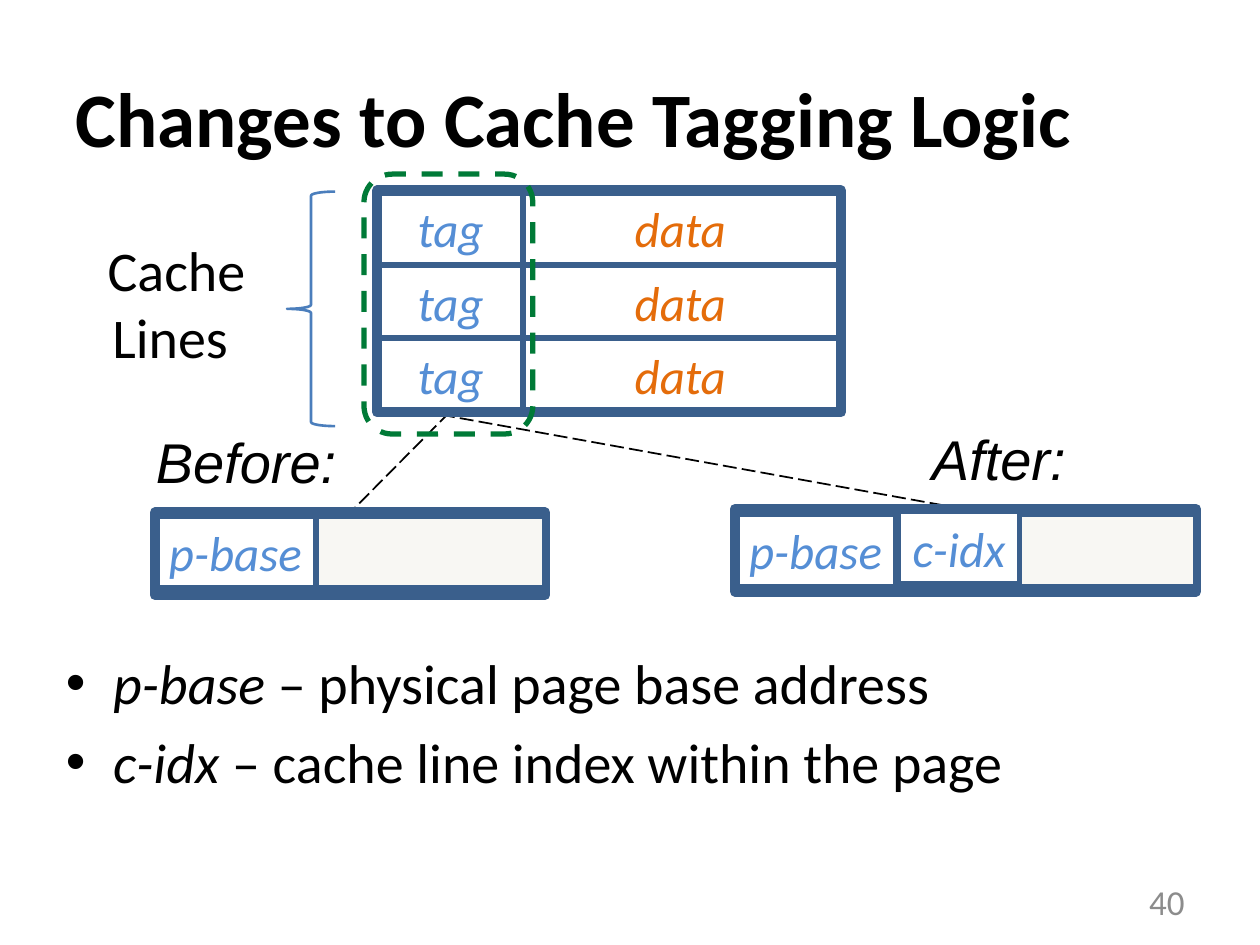
"""Build a slide on how cache tags change."""
import pptx
import pptx.chart.data
import pptx.dml.color
import pptx.enum.dml
import pptx.enum.shapes
import pptx.enum.text
import pptx.oxml
import pptx.util

Pt = pptx.util.Pt
KIND = pptx.enum.shapes.MSO_SHAPE
DASH = pptx.enum.dml.MSO_LINE
ALIGN = pptx.enum.text.PP_ALIGN
MID = pptx.enum.text.MSO_ANCHOR.MIDDLE

NAVY, BLUE, ORANGE, GREEN = "3A5F8C", "558ED5", "E46C0A", "007A37"
BLACK, GRAY, PALE, BRACE = "000000", "8C8C8C", "F8F7F3", "4B7EBC"
TITLE = "Changes to Cache Tagging Logic"
TERMS = [("p-base", " – physical page base address"),
         ("c-idx", " – cache line index within the page")]
ROWS = [("tag", 216, 83, BLUE), ("data", 298.5, 180.5, ORANGE)]
TOP, PITCH, HIGH = 110, 41.8, 41
FRAMES = [(215.5, 109, 265, 126.5), (88.5, 293, 223, 47), (420, 291, 263.5, 47)]
FIELDS = [("p-base", 88.5, 295, 92), ("", 180.5, 295, 131),
          ("p-base", 420, 294, 92), ("", 582.5, 294, 101),
          ("c-idx", 513.5, 292.5, 69)]
LEADS = [(257, 235.5, 200, 293), (252, 237, 551.5, 291)]
NOTES = [("Before:", (82, 241, 119, 46), 32, "Arial", BLACK, ALIGN.LEFT),
         ("After:", (525.5, 239, 92, 46), 32, "Arial", BLACK, ALIGN.LEFT),
         (" Cache\nLines", (44, 131, 106.5, 85), 32, "Calibri", BLACK, ALIGN.CENTER),
         ("40", (516, 500.5, 168, 29), 20, "Calibri", GRAY, ALIGN.RIGHT)]


def tint(code):
    return pptx.dml.color.RGBColor.from_string(code)


def style(run, size, color, face="Calibri", bold=False, slant=False):
    font = run.font
    font.size, font.name, font.bold, font.italic = Pt(size), face, bold, slant
    font.color.rgb = tint(color)


def place(shape, box):
    shape.left, shape.top, shape.width, shape.height = map(Pt, box)


def write(shape, text, size, color, face, align, slant):
    frame = shape.text_frame
    frame.text = text
    for para in frame.paragraphs:
        para.alignment = align
        for run in para.runs:
            style(run, size, color, face, slant=slant)


def draw(slide, kind, box, color, width, fill=None):
    shape = slide.shapes.add_shape(kind, *map(Pt, box))
    shape.shadow.inherit = False
    if fill:
        shape.fill.solid()
        shape.fill.fore_color.rgb = tint(fill)
    else:
        shape.fill.background()
    shape.line.color.rgb = tint(color)
    shape.line.width = Pt(width)
    return shape


def cell(slide, text, box, color):
    shape = draw(slide, KIND.RECTANGLE, box, NAVY, 3, None if text else PALE)
    if text:
        shape.text_frame.word_wrap = False
        shape.text_frame.vertical_anchor = MID
        write(shape, text, 28, color, "Calibri", ALIGN.CENTER, True)


def lead(slide, ends):
    line = slide.shapes.add_connector(
        pptx.enum.shapes.MSO_CONNECTOR.STRAIGHT, *map(Pt, ends))
    line.line.color.rgb = tint(BLACK)
    line.line.width = Pt(1)
    line.line.dash_style = DASH.LONG_DASH
    props = line._element.spPr
    props.append(props.makeelement(pptx.oxml.ns.qn("a:effectLst"), {}))


def heads(slide):
    title, body = slide.placeholders
    place(title, (36, 21.6, 648, 90))
    title.text_frame.text = TITLE
    title.text_frame.vertical_anchor = MID
    para = title.text_frame.paragraphs[0]
    para.alignment = ALIGN.LEFT
    style(para.runs[0], 44, BLACK, bold=True)
    place(body, (29, 366.5, 654, 93.5))
    frame = body.text_frame
    frame.margin_left = frame.margin_right = Pt(8.6)
    frame.margin_top = frame.margin_bottom = Pt(4.3)
    frame.text = "\n".join(term + note for term, note in TERMS)
    for para, (term, note) in zip(frame.paragraphs, TERMS):
        para.runs[0].text = term
        para.add_run().text = note
        for run, slant in zip(para.runs, (True, False)):
            style(run, 32, BLACK, slant=slant)


def main():
    deck = pptx.Presentation()
    deck.slide_width, deck.slide_height = Pt(720), Pt(540)
    slide = deck.slides.add_slide(deck.slide_layouts[1])
    heads(slide)
    for ends in LEADS:
        lead(slide, ends)
    for box in FRAMES:
        draw(slide, KIND.RECTANGLE, box, NAVY, 6)
    for row in range(3):
        for text, left, wide, color in ROWS:
            cell(slide, text, (left, TOP + row * PITCH, wide, HIGH), color)
    for text, left, top, wide in FIELDS:
        cell(slide, text, (left, top, wide, HIGH), BLUE)
    ring = draw(slide, KIND.ROUNDED_RECTANGLE, (208, 99.5, 96.5, 148.5), GREEN, 3)
    ring.line.dash_style = DASH.DASH
    draw(slide, KIND.LEFT_BRACE, (164, 109.5, 27.5, 134), BRACE, 1.5)
    for text, box, size, face, color, align in NOTES:
        note = slide.shapes.add_textbox(*map(Pt, box))
        note.text_frame.word_wrap = True
        if align == ALIGN.RIGHT:
            note.text_frame.vertical_anchor = MID
        write(note, text, size, color, face, align, face == "Arial")
    deck.save("out.pptx")


if __name__ == "__main__":
    main()
